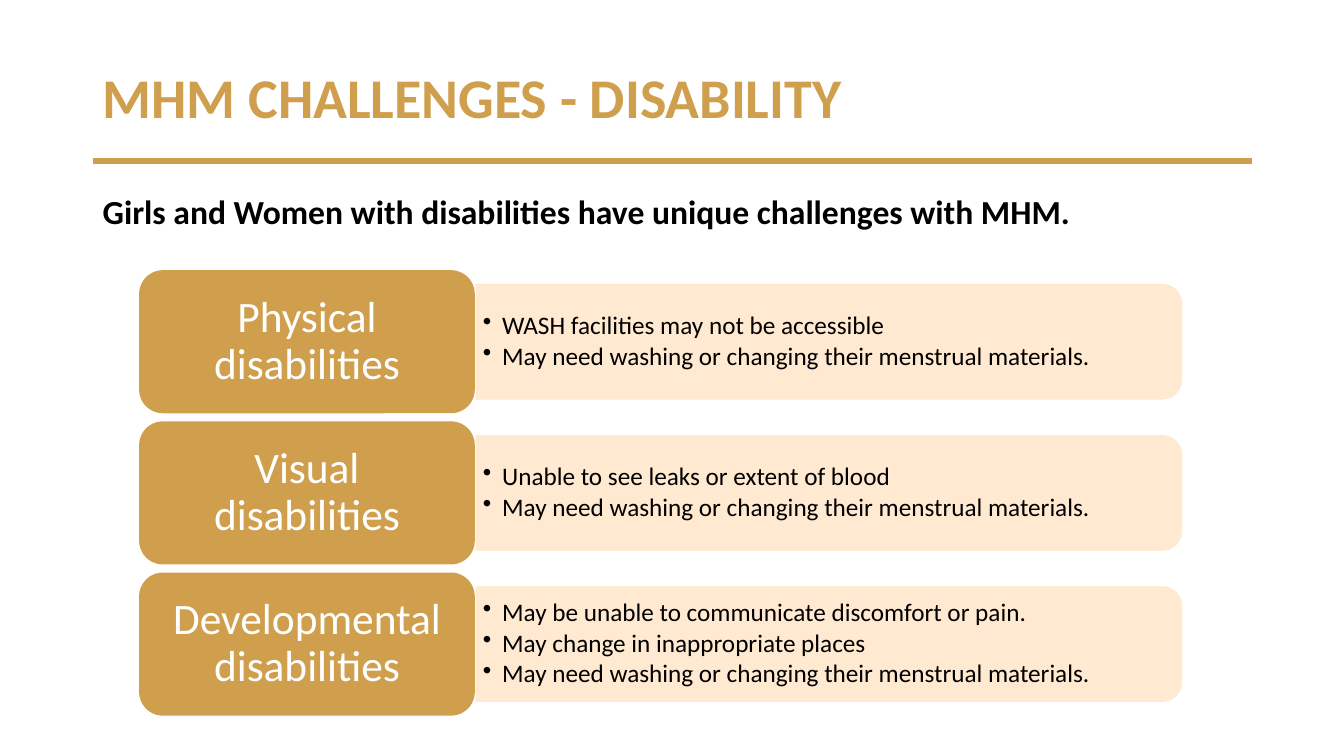
from lxml import etree
from pptx import Presentation
from pptx.dml.color import RGBColor
from pptx.enum.shapes import MSO_CONNECTOR, MSO_SHAPE
from pptx.enum.text import MSO_ANCHOR, PP_ALIGN
from pptx.oxml.ns import qn
from pptx.util import Inches, Pt

TITLE = "MHM CHALLENGES - DISABILITY"
SUBTITLE = "Girls and Women with disabilities have unique challenges with MHM."
WASHING = "May need washing or changing their menstrual materials."
CHALLENGES = [
    ("Physical disabilities", ["WASH facilities may not be accessible", WASHING]),
    ("Visual disabilities", ["Unable to see leaks or extent of blood", WASHING]),
    ("Developmental disabilities", [
        "May be unable to communicate discomfort or pain.",
        "May change in inappropriate places",
        WASHING,
    ]),
]

GOLD = RGBColor(0xCF, 0x9F, 0x4D)
CREAM = RGBColor(0xFF, 0xE8, 0xCC)
BLACK = RGBColor(0, 0, 0)
WHITE = RGBColor(255, 255, 255)
MIDDLE = MSO_ANCHOR.MIDDLE
TOP = MSO_ANCHOR.TOP
CENTER = PP_ALIGN.CENTER
LEFT = PP_ALIGN.LEFT
STRAIGHT = MSO_CONNECTOR.STRAIGHT
ROUNDED = MSO_SHAPE.ROUNDED_RECTANGLE
ROUNDED_TOP = MSO_SHAPE.ROUND_2_SAME_RECTANGLE

FONT = "Calibri"
ROW_TOP, ROW_PITCH = 2.68, 1.5
LABEL_LEFT, LABEL_WIDTH, LABEL_HEIGHT = 1.38, 3.33, 1.42
PANEL_LEFT, PANEL_WIDTH, PANEL_HEIGHT = 4.72, 7, 1.14
BULLETS_WIDTH, BULLETS_HEIGHT = 6.95, 1.03


def write(frame, lines, size, color, bold=False, align=LEFT, anchor=MIDDLE,
          insets=(0.1, 0.05), spacing=0.9, wrap=True, bullet=False):
    frame.word_wrap = wrap
    frame.vertical_anchor = anchor
    frame.margin_left = frame.margin_right = Inches(insets[0])
    frame.margin_top = frame.margin_bottom = Inches(insets[1])
    for index, line in enumerate(lines):
        para = frame.add_paragraph() if index else frame.paragraphs[0]
        para.text = line
        para.alignment = align
        para.line_spacing = spacing
        if bullet:
            para.space_after = Pt(2.5)
            properties = para._p.get_or_add_pPr()
            properties.set("marL", str(Inches(0.19)))
            properties.set("indent", str(Inches(-0.19)))
            etree.SubElement(properties, qn("a:buChar")).set("char", "•")
        para.font.name = FONT
        para.font.size = Pt(size)
        para.font.bold = bold
        para.font.color.rgb = color


def add_box(page, left, top, width, height):
    return page.shapes.add_textbox(
        Inches(left), Inches(top), Inches(width), Inches(height))


def add_filled(page, kind, left, top, width, height, color):
    shape = page.shapes.add_shape(
        kind, Inches(left), Inches(top), Inches(width), Inches(height))
    shape.shadow.inherit = False
    shape.fill.solid()
    shape.fill.fore_color.rgb = color
    shape.line.fill.background()
    return shape


def add_panel(page, middle):
    left = PANEL_LEFT + (PANEL_WIDTH - PANEL_HEIGHT) / 2
    panel = add_filled(page, ROUNDED_TOP, left, middle - PANEL_WIDTH / 2,
                       PANEL_HEIGHT, PANEL_WIDTH, CREAM)
    panel.rotation = 90
    panel.line.color.rgb = CREAM
    panel.line.width = Pt(0.5)
    for color in panel._element.spPr.iter(qn("a:srgbClr")):
        etree.SubElement(color, qn("a:alpha")).set("val", "90000")


def add_row(page, index, label, bullets):
    top = ROW_TOP + index * ROW_PITCH
    middle = top + LABEL_HEIGHT / 2
    add_panel(page, middle)
    box = add_box(page, PANEL_LEFT, middle - BULLETS_HEIGHT / 2,
                  BULLETS_WIDTH, BULLETS_HEIGHT)
    write(box.text_frame, bullets, 18, BLACK, insets=(0.07, 0.04), bullet=True)
    shape = add_filled(page, ROUNDED, LABEL_LEFT, top,
                       LABEL_WIDTH, LABEL_HEIGHT, GOLD)
    write(shape.text_frame, [label], 31, WHITE, align=CENTER, insets=(0.2, 0.13))


def main():
    deck = Presentation()
    deck.slide_width, deck.slide_height = Inches(13.33), Inches(7.5)
    page = deck.slides.add_slide(deck.slide_layouts[6])

    title = add_box(page, 0.92, 0.4, 7.76, 1.2)
    write(title.text_frame, [TITLE], 40, GOLD, bold=True)

    rule = page.shapes.add_connector(
        STRAIGHT, Inches(0.92), Inches(1.6), Inches(12.42), Inches(1.6))
    rule.line.color.rgb = GOLD
    rule.line.width = Pt(4.5)
    etree.SubElement(rule._element.spPr, qn("a:effectLst"))

    subtitle = add_box(page, 0.92, 1.84, 9.9, 0.5)
    write(subtitle.text_frame, [SUBTITLE], 24, BLACK, bold=True,
          anchor=TOP, spacing=1.0, wrap=False)

    for index, (label, bullets) in enumerate(CHALLENGES):
        add_row(page, index, label, bullets)

    deck.save("out.pptx")


if __name__ == "__main__":
    main()
